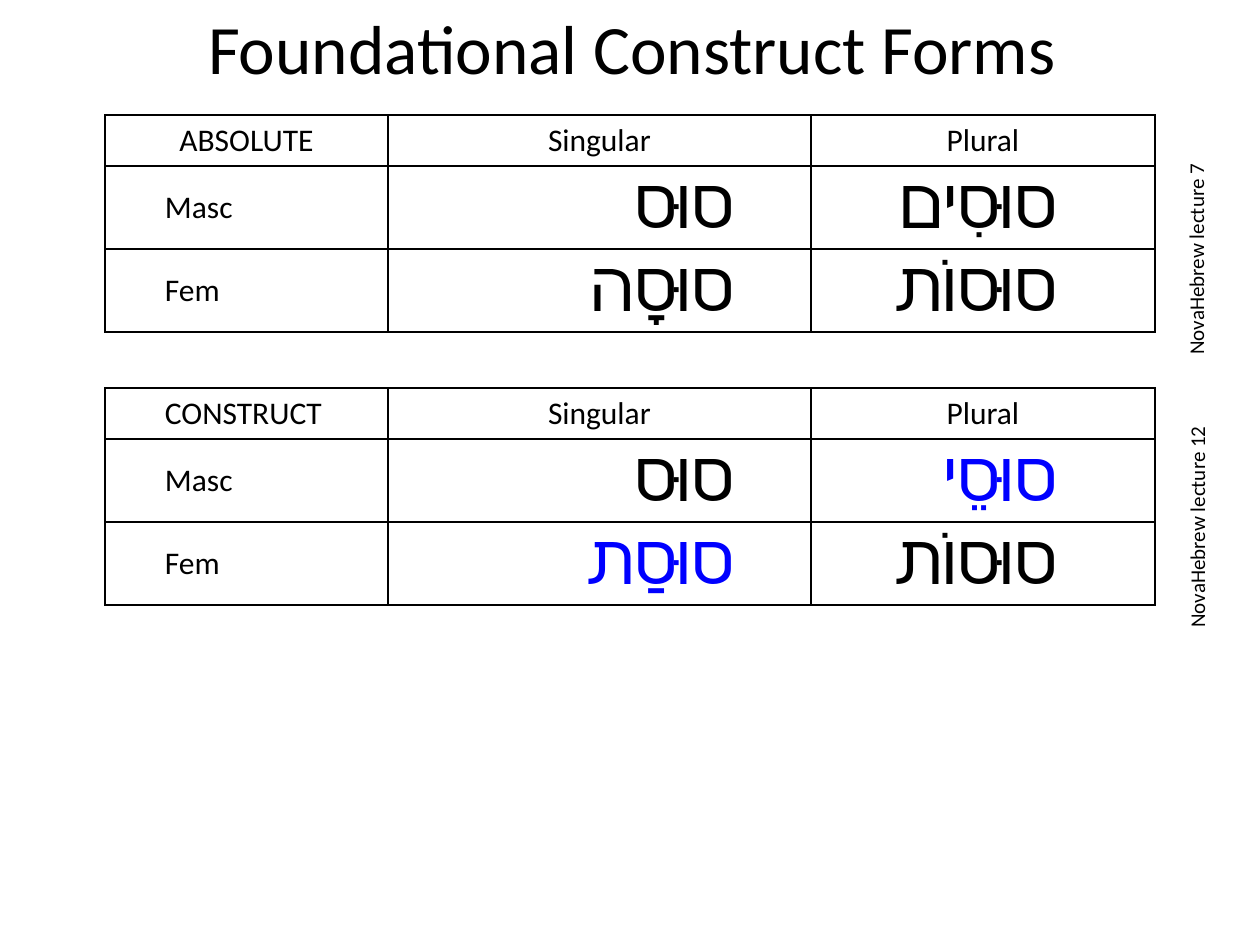
import dataclasses

import lxml.etree
import pptx
import pptx.dml.color
import pptx.enum.text
import pptx.oxml.ns
import pptx.util

EMU_PER_PX = 914400 / 126
ALIGN = pptx.enum.text.PP_ALIGN
MIDDLE = pptx.enum.text.MSO_ANCHOR.MIDDLE
qn = pptx.oxml.ns.qn


@dataclasses.dataclass(frozen=True)
class Theme:
    black: str = "000000"
    blue: str = "0000FF"
    latin: str = "Calibri"
    hebrew: str = "Arial"
    title: float = 39.6
    label: float = 18
    word: float = 40
    note: float = 12
    border: float = 1


theme = Theme()


def px(n):
    return pptx.util.Emu(round(n * EMU_PER_PX))


def style(p, size, font=theme.latin, color=theme.black):
    for r in p.runs:
        r.font.size = pptx.util.Pt(size)
        r.font.name = font
        r.font.color.rgb = pptx.dml.color.RGBColor.from_string(color)


prs = pptx.Presentation()
prs.slide_width, prs.slide_height = px(1260), px(945)
s = prs.slides.add_slide(prs.slide_layouts[5])

title = s.shapes.title
title.left, title.top, title.width, title.height = px(65), px(0), px(1134), px(94)
tf = title.text_frame
tf.text = "Foundational Construct Forms"
tf.vertical_anchor = MIDDLE
tf.paragraphs[0].alignment = ALIGN.CENTER
style(tf.paragraphs[0], theme.title)

col_widths = [283, 423, 344]
row_heights = [51, 83, 83]
label_indent = 60
word_indents = [None, 77, 98]
tables = [
    (115, [["ABSOLUTE", "Singular", "Plural"],
           ["Masc", "סוּס", "סוּסִים"],
           ["Fem", "סוּסָה", "סוּסוֹת"]]),
    (388, [["CONSTRUCT", "Singular", "Plural"],
           ["Masc", "סוּס", "סוּסֵי"],
           ["Fem", "סוּסַת", "סוּסוֹת"]]),
]
changed_forms = {"סוּסֵי", "סוּסַת"}

for top, rows in tables:
    frame = s.shapes.add_table(3, 3, px(105), px(top),
                               px(sum(col_widths)), px(sum(row_heights)))
    table = frame.table
    table.first_row = table.horz_banding = False
    for column, width in zip(table.columns, col_widths):
        column.width = px(width)
    for row, height in zip(table.rows, row_heights):
        row.height = px(height)

    for i, row in enumerate(rows):
        for j, text in enumerate(row):
            cell = table.cell(i, j)
            cell.fill.background()
            cell.vertical_anchor = MIDDLE
            p = cell.text_frame.paragraphs[0]
            p.text = text
            if i and j:
                p.alignment = ALIGN.RIGHT
                p._p.get_or_add_pPr().set("rtl", "1")
                cell.margin_right = px(word_indents[j])
                cell.margin_top = cell.margin_bottom = 0
                color = theme.blue if text in changed_forms else theme.black
                style(p, theme.word, theme.hebrew, color)
            else:
                if i or text == "CONSTRUCT":
                    p.alignment = ALIGN.LEFT
                    cell.margin_left = px(label_indent)
                else:
                    p.alignment = ALIGN.CENTER
                style(p, theme.label)

            tcPr = cell._tc.get_or_add_tcPr()
            for k, side in enumerate(("a:lnL", "a:lnR", "a:lnT", "a:lnB")):
                ln = lxml.etree.Element(qn(side), w=str(pptx.util.Pt(theme.border)))
                fill = lxml.etree.SubElement(ln, qn("a:solidFill"))
                lxml.etree.SubElement(fill, qn("a:srgbClr"), val=theme.black)
                tcPr.insert(k, ln)

notes = [
    ("NovaHebrew lecture 7", 1086, 238, 220),
    ("NovaHebrew lecture 12", 1076, 500, 242),
]
for text, left, top, width in notes:
    sp = s.shapes.add_textbox(px(left), px(top), px(width), px(38))
    sp.rotation = 270
    tf = sp.text_frame
    tf.text = text
    tf.word_wrap = False
    tf.auto_size = pptx.enum.text.MSO_AUTO_SIZE.SHAPE_TO_FIT_TEXT
    style(tf.paragraphs[0], theme.note)

prs.save("out.pptx")
